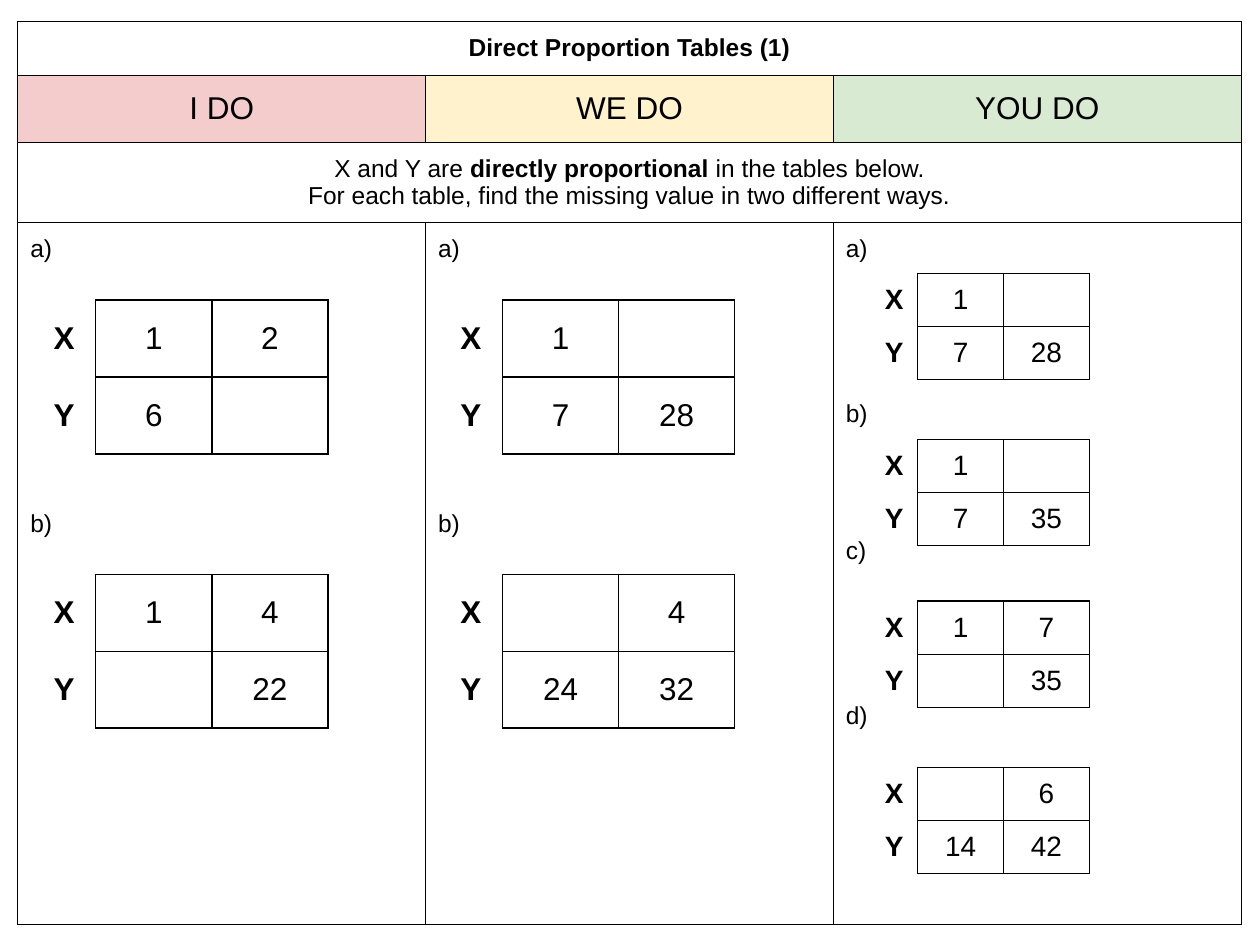
from dataclasses import dataclass

from lxml import etree
from pptx import Presentation
from pptx import util as u
from pptx.dml.color import RGBColor
from pptx.enum import text
from pptx.oxml import ns


@dataclass(frozen=True)
class Theme:
    font: str = "Arial"
    ink: str = "000000"
    i_do: str = "F4CCCC"
    we_do: str = "FFF2CC"
    you_do: str = "D9EAD3"
    body: int = 14
    heading: int = 18
    small: int = 16
    line: float = 15.7  # height of one body line, in points
    frame: float = 0.75
    grid: float = 1


NO_STYLE = "{2D5ABB26-0587-4C30-8999-92F81FD0307C}"
CENTER, LEFT = text.PP_ALIGN.CENTER, text.PP_ALIGN.LEFT
MIDDLE, TOP = text.MSO_ANCHOR.MIDDLE, text.MSO_ANCHOR.TOP


class Sheet:
    """The theme and the slide being filled."""

    def __init__(self, prs, theme):
        self.theme = theme
        self.s = prs.slides.add_slide(prs.slide_layouts[6])

    def table(self, x, y, cols, rows):
        """Add an unstyled table; all lengths are in centimetres."""
        tbl = self.s.shapes.add_table(len(rows), len(cols), u.Cm(x), u.Cm(y),
                                      u.Cm(sum(cols)), u.Cm(sum(rows))).table
        tbl.first_row = tbl.horz_banding = False
        tbl._tbl.tblPr.find(ns.qn("a:tableStyleId")).text = NO_STYLE
        for col, width in zip(tbl.columns, cols):
            col.width = u.Cm(width)
        for row, height in zip(tbl.rows, rows):
            row.height = u.Cm(height)
        return tbl

    def borders(self, cell, width, sides="LRTB"):
        tcPr = cell._tc.get_or_add_tcPr()
        for i, side in enumerate(sides):
            ln = etree.Element(ns.qn(f"a:ln{side}"), w=str(u.Pt(width)))
            fill = etree.SubElement(ln, ns.qn("a:solidFill"))
            etree.SubElement(fill, ns.qn("a:srgbClr"), val=self.theme.ink)
            tcPr.insert(i, ln)

    def fill(self, cell, color=None):
        if color:
            cell.fill.solid()
            cell.fill.fore_color.rgb = RGBColor.from_string(color)
        else:
            cell.fill.background()

    def margins(self, cell, size):
        cell.margin_left = cell.margin_right = u.Cm(size)
        cell.margin_top = cell.margin_bottom = u.Cm(size)

    def label(self, cell, lines, size, bold=False, align=CENTER, anchor=MIDDLE):
        """Add one paragraph per line; a line may be a list of (text, bold) runs."""
        cell.vertical_anchor = anchor
        tf = cell.text_frame
        for i, line in enumerate(lines):
            p = tf.add_paragraph() if i else tf.paragraphs[0]
            p.alignment = align
            p.font.name, p.font.size = self.theme.font, u.Pt(size)
            p.font.color.rgb = RGBColor.from_string(self.theme.ink)
            if isinstance(line, str):
                p.font.bold = bold
                p.add_run().text = line
            else:
                for words, strong in line:
                    r = p.add_run()
                    r.text, r.font.bold = words, strong

    def worksheet(self, title, headings, instructions, questions):
        """Draw the frame; questions holds, per column, (letter, lines below the last one)."""
        t = self.theme
        tbl = self.table(0.36, 0.43, [8.22] * 3, [1.09, 1.35, 1.62, 14.15])
        for row in (0, 2):
            tbl.cell(row, 0).merge(tbl.cell(row, 2))
        for cell in tbl.iter_cells():
            self.fill(cell)
            self.borders(cell, t.frame)
            self.margins(cell, 0.25)
        self.label(tbl.cell(0, 0), [title], t.body, bold=True, anchor=TOP)
        self.label(tbl.cell(2, 0), instructions, t.body, anchor=TOP)
        for col, (heading, color) in enumerate(headings):
            self.fill(tbl.cell(1, col), color)
            self.label(tbl.cell(1, col), [heading], t.heading)
        for col, items in enumerate(questions):
            cell = tbl.cell(3, col)
            self.label(cell, [letter for letter, _ in items], t.body,
                       align=LEFT, anchor=TOP)
            for p, (_, lines) in zip(cell.text_frame.paragraphs, items):
                if lines:
                    p.space_before = u.Pt((lines - 1) * t.line)

    def proportion(self, x, y, layout, xs, ys):
        """Draw an X and Y table; an empty string is the missing value."""
        name_width, value_width, height, size = layout
        tbl = self.table(x, y, [name_width, value_width, value_width], [height] * 2)
        for row, values in enumerate((("X", *xs), ("Y", *ys))):
            for col, value in enumerate(values):
                cell = tbl.cell(row, col)
                self.fill(cell)
                self.borders(cell, self.theme.grid, "LRTB" if col else "R")
                self.label(cell, [value] if value else [], size, bold=col == 0)


def main():
    prs = Presentation()
    prs.slide_width, prs.slide_height = u.Cm(25.4), u.Cm(19.05)
    theme = Theme()
    sheet = Sheet(prs, theme)

    two = [("a)", 0), ("b)", 10)]
    four = [("a)", 0), ("b)", 6), ("c)", 5), ("d)", 6)]
    sheet.worksheet(
        "Direct Proportion Tables (1)",
        [("I DO", theme.i_do), ("WE DO", theme.we_do), ("YOU DO", theme.you_do)],
        [[("X and Y are ", False), ("directly proportional ", True),
          ("in the tables below.", False)],
         "For each table, find the missing value in two different ways."],
        [two, two, four])

    # name width, value width, row height, type size
    large = (1.27, 2.34, 1.55, theme.heading)
    small = (0.95, 1.73, 1.07, theme.small)
    large_tops, small_tops = (6.05, 11.58), (5.51, 8.86, 12.12, 15.47)
    columns = [
        (0.66, large_tops, large,
         [(("1", "2"), ("6", "")), (("1", "4"), ("", "22"))]),
        (8.86, large_tops, large,
         [(("1", ""), ("7", "28")), (("", "4"), ("24", "32"))]),
        (17.55, small_tops, small,
         [(("1", ""), ("7", "28")), (("1", ""), ("7", "35")),
          (("1", "7"), ("", "35")), (("", "6"), ("14", "42"))]),
    ]
    for x, tops, layout, tables in columns:
        for y, (xs, ys) in zip(tops, tables):
            sheet.proportion(x, y, layout, xs, ys)

    prs.save("out.pptx")


if __name__ == "__main__":
    main()
